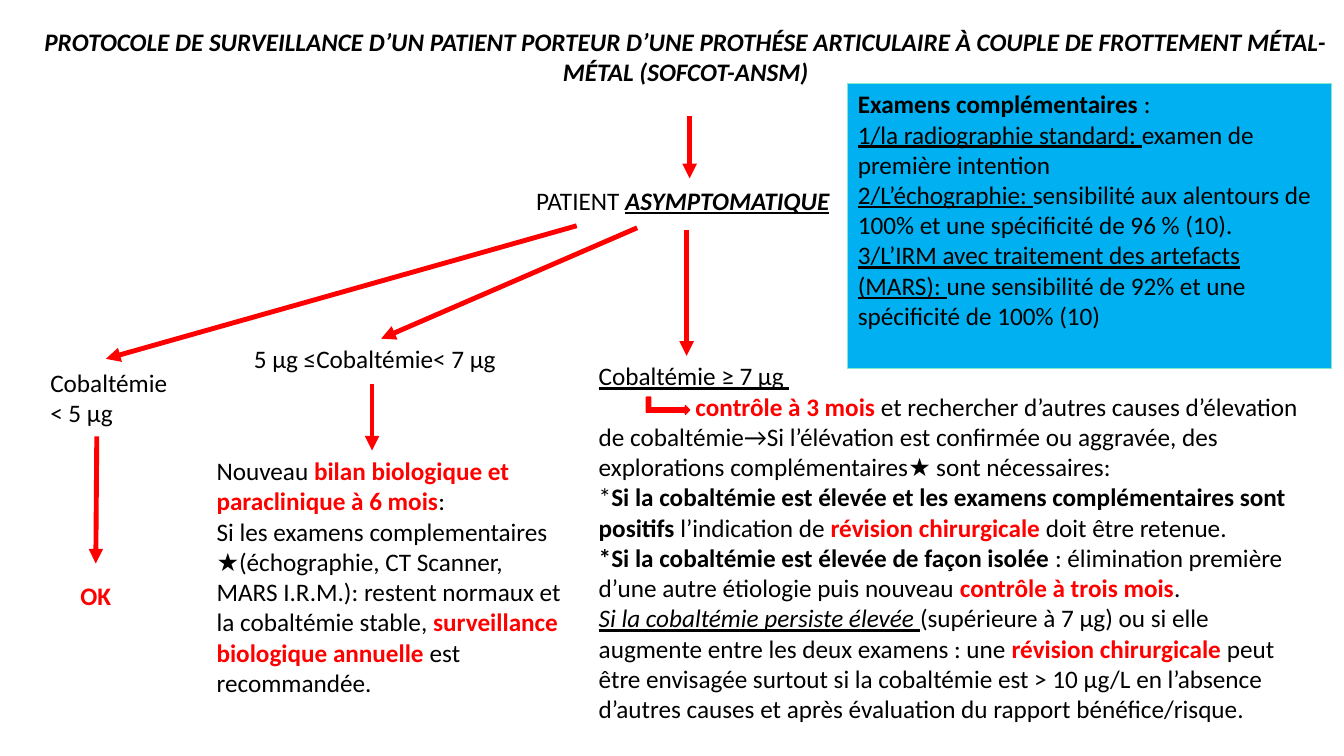
"""Build the follow-up protocol slide for metal-on-metal joint prostheses."""
from lxml import etree
from pptx import Presentation, util as u
from pptx.dml.color import RGBColor
from pptx.enum import shapes, text
from pptx.oxml.ns import qn

BLACK, RED, BLUE, MINT = "000000", "FF0000", "00B0F0", "83E8CC"


def color(code):
    """Turn a hex string into a colour."""
    return RGBColor.from_string(code)


class Board:
    """Hold the style and the current slide."""

    font, size, weight = "Calibri", 18, 3.5

    def __init__(self, slide):
        """Keep the slide to draw on."""
        self.slide = slide

    def fill(self, shape, paras, align=text.PP_ALIGN.LEFT, ink=BLACK, indents=()):
        """Fill a shape with paragraphs of (text, marks) runs; marks are b, i, u, r."""
        frame = shape.text_frame
        frame.word_wrap = True
        frame.auto_size = text.MSO_AUTO_SIZE.SHAPE_TO_FIT_TEXT
        frame.vertical_anchor = text.MSO_ANCHOR.TOP
        for n, runs in enumerate(paras):
            para = frame.add_paragraph() if n else frame.paragraphs[0]
            para.alignment = align
            para.font.name, para.font.size = self.font, u.Pt(self.size)
            para.font.color.rgb = color(ink)
            if n in indents:
                para._p.get_or_add_pPr().set("indent", str(u.Inches(0.96)))
            for words, marks in runs:
                run = para.add_run()
                run.text = words
                if "b" in marks:
                    run.font.bold = True
                if "i" in marks:
                    run.font.italic = True
                if "u" in marks:
                    run.font.underline = True
                if "r" in marks:
                    run.font.color.rgb = color(RED)

    def title(self, box, words):
        """Place and fill the title placeholder."""
        shape = self.slide.shapes.title
        shape.left, shape.top, shape.width, shape.height = map(u.Inches, box)
        self.fill(shape, [[(words, "bi")]], text.PP_ALIGN.CENTER)

    def label(self, box, paras, **style):
        """Add a text box."""
        self.fill(self.slide.shapes.add_textbox(*map(u.Inches, box)), paras, **style)

    def shape(self, kind, box, fill, edge, width):
        """Add a filled preset shape."""
        shape = self.slide.shapes.add_shape(kind, *map(u.Inches, box))
        shape.shadow.inherit = False
        shape.fill.solid()
        shape.fill.fore_color.rgb = color(fill)
        shape.line.color.rgb = color(edge)
        shape.line.width = u.Pt(width)
        return shape

    def arrow(self, start, end):
        """Add a red arrow."""
        link = self.slide.shapes.add_connector(
            shapes.MSO_CONNECTOR.STRAIGHT, *map(u.Inches, start + end))
        link.line.color.rgb = color(RED)
        link.line.width = u.Pt(self.weight)
        etree.SubElement(link.line._get_or_add_ln(), qn("a:tailEnd"), type="triangle")
        etree.SubElement(link._element.spPr, qn("a:effectLst"))


def main():
    """Draw the slide and save it."""
    deck = Presentation()
    deck.slide_width, deck.slide_height = u.Inches(13.33), u.Inches(7.5)
    board = Board(deck.slides.add_slide(deck.slide_layouts[5]))

    board.title((0.26, 0.21, 13.08, 0.71),
                "PROTOCOLE DE SURVEILLANCE D’UN PATIENT PORTEUR D’UNE PROTHÉSE "
                "ARTICULAIRE À COUPLE DE FROTTEMENT MÉTAL-MÉTAL (SOFCOT-ANSM)")
    board.label((5.22, 1.79, 3.37, 0.4), [[("PATIENT ", ""), ("ASYMPTOMATIQUE", "biu")]])

    for start, end in (
        ((6.84, 1.15), (6.84, 1.77)),
        ((5.72, 2.24), (1.05, 3.56)),
        ((6.32, 2.26), (3.78, 3.36)),
        ((6.81, 2.28), (6.81, 3.53)),
        ((0.96, 4.33), (0.95, 5.59)),
        ((3.69, 3.81), (3.69, 4.47)),
    ):
        board.arrow(start, end)

    board.label((0.4, 3.59, 1.42, 0.71), [[("Cobaltémie< 5 μg", "")]])
    board.label((0.24, 5.71, 1.42, 0.4), [[("OK", "b")]],
                align=text.PP_ALIGN.CENTER, ink=RED)

    board.label((2.42, 3.36, 2.72, 0.71), [[("5 μg ≤Cobaltémie< 7 μg", "")]])
    board.label((2.05, 4.47, 3.67, 2.83), [
        [("Nouveau ", ""), ("bilan biologique et paraclinique à 6 mois", "br"), (":", "")],
        [("Si les examens complementaires ★(échographie, CT Scanner, MARS I.R.M.): "
          "restent normaux et la cobaltémie stable, ", ""),
         ("surveillance biologique annuelle ", "br"), ("est recommandée.", "")],
    ])

    board.label((5.84, 3.53, 7.24, 4.04), [
        [("Cobaltémie ≥ 7 μg ", "u")],
        [("contrôle à 3 mois ", "br"),
         ("et rechercher d’autres causes d’élevation de cobaltémie→Si l’élévation est "
          "confirmée ou aggravée, des explorations complémentaires★ sont nécessaires:", "")],
        [("*", ""),
         ("Si la cobaltémie est élevée et les examens complémentaires sont positifs", "b"),
         (" l’indication de ", ""), ("révision chirurgicale ", "br"),
         ("doit être retenue.", "")],
        [("*Si la cobaltémie est élevée de façon isolée ", "b"),
         (": élimination première d’une autre étiologie puis nouveau ", ""),
         ("contrôle à trois mois", "br"), (".", "")],
        [("Si la cobaltémie persiste élevée ", "iu"),
         ("(supérieure à 7 μg) ou si elle augmente entre les deux examens : une ", ""),
         ("révision chirurgicale ", "br"),
         ("peut être envisagée surtout si la cobaltémie est > 10 μg/L en l’absence "
          "d’autres causes et après évaluation du rapport bénéfice/risque.", "")],
    ], indents=(1,))
    bend = board.shape(shapes.MSO_SHAPE.BENT_UP_ARROW, (6.54, 3.81, 0.17, 0.43), RED, RED, 1)
    bend.rotation = 90

    exams = board.shape(shapes.MSO_SHAPE.RECTANGLE, (8.41, 0.83, 4.8, 2.83), BLUE, MINT, 0.75)
    board.fill(exams, [
        [("Examens complémentaires ", "b"), (":", "")],
        [("1/la radiographie standard: ", "u"), ("examen de première intention", "")],
        [("2/L’échographie: ", "u"),
         ("sensibilité aux alentours de 100% et une spécificité de 96 % (10).", "")],
        [("3/L’IRM avec traitement des artefacts (MARS): ", "u"),
         ("une sensibilité de 92% et une spécificité de 100% (10)", "")],
    ])
    exams.text_frame.auto_size = text.MSO_AUTO_SIZE.NONE

    deck.save("out.pptx")


if __name__ == "__main__":
    main()
